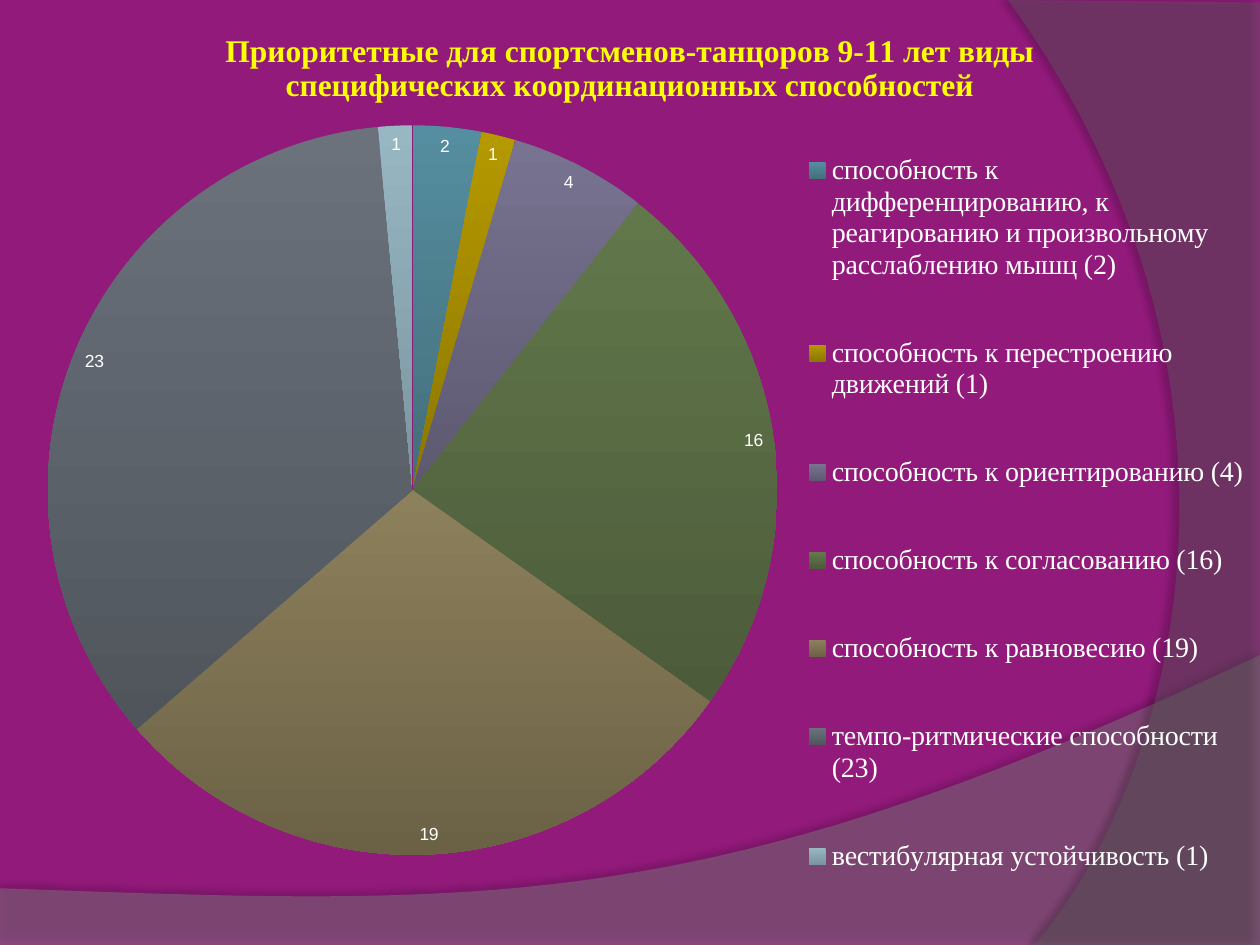
from lxml.etree import SubElement
from pptx import Presentation
from pptx.chart.data import CategoryChartData
from pptx.dml.color import RGBColor
from pptx.enum.chart import XL_CHART_TYPE, XL_LABEL_POSITION, XL_LEGEND_POSITION
from pptx.oxml import parse_xml
from pptx.oxml.ns import nsdecls, qn
from pptx.util import Inches, Pt

BACKGROUND = RGBColor(0x92, 0x1A, 0x7B)
WAVE_GRAY = RGBColor(0x7F, 0x7F, 0x7F)
ARC_GRAY = RGBColor(0x5E, 0x5E, 0x5E)
WHITE = RGBColor(0xFF, 0xFF, 0xFF)
YELLOW = RGBColor(0xFF, 0xFF, 0x00)

TITLE = ("Приоритетные для спортсменов-танцоров 9-11 лет виды "
         "специфических координационных способностей")
ABILITIES = [
    ("способность к дифференцированию, к реагированию и произвольному расслаблению мышц (2)",
     2, RGBColor(0x55, 0x8E, 0xA0), RGBColor(0x44, 0x6E, 0x7A)),
    ("способность к перестроению движений (1)",
     1, RGBColor(0xB5, 0x99, 0x00), RGBColor(0x8C, 0x77, 0x00)),
    ("способность к ориентированию (4)",
     4, RGBColor(0x77, 0x73, 0x91), RGBColor(0x5D, 0x59, 0x70)),
    ("способность к согласованию (16)",
     16, RGBColor(0x62, 0x78, 0x4B), RGBColor(0x4C, 0x5B, 0x3A)),
    ("способность к равновесию (19)",
     19, RGBColor(0x8D, 0x80, 0x5C), RGBColor(0x6B, 0x61, 0x45)),
    ("темпо-ритмические способности (23)",
     23, RGBColor(0x6B, 0x72, 0x7B), RGBColor(0x50, 0x55, 0x5C)),
    ("вестибулярная устойчивость (1)",
     1, RGBColor(0x97, 0xB7, 0xC3), RGBColor(0x7B, 0x95, 0x9F)),
]
CURVE_STEPS = 40


def curve_points(*controls):
    points = []
    for step in range(CURVE_STEPS + 1):
        t = step / CURVE_STEPS
        weights = ((1 - t) ** 3, 3 * t * (1 - t) ** 2, 3 * t ** 2 * (1 - t), t ** 3)
        points.append(tuple(
            Inches(sum(weight * control[axis] for weight, control in zip(weights, controls)))
            for axis in (0, 1)))
    return points


def set_layout(parent, left, top, width, height, inner=False):
    for old_layout in parent.findall(qn("c:layout")):
        parent.remove(old_layout)
    layout = parse_xml(f"<c:layout {nsdecls('c')}/>")
    manual = SubElement(layout, qn("c:manualLayout"))
    values = {"layoutTarget": "inner"} if inner else {}
    values.update(xMode="edge", yMode="edge",
                  x=left / presentation.slide_width, y=top / presentation.slide_height,
                  w=width / presentation.slide_width, h=height / presentation.slide_height)
    for name, value in values.items():
        SubElement(manual, qn(f"c:{name}")).set("val", str(value))
    parent.insert(0 if inner else 1, layout)


presentation = Presentation()
presentation.slide_width = Inches(10)
presentation.slide_height = Inches(7.5)
slide = presentation.slides.add_slide(presentation.slide_layouts[6])
slide.background.fill.solid()
slide.background.fill.fore_color.rgb = BACKGROUND

decorations = [
    {"corners": [(0, 7.05), (0, 7.5), (10, 7.5)],
     "curve": [(10, 5.2), (5.59, 7.29), (3.91, 7.19), (0, 7.05)],
     "color": WAVE_GRAY, "opacity": 45,
     "shadow": {"opacity": 35, "blur": 4, "distance": 3.5, "angle": 270}},
    {"corners": [(10, 0.02), (10, 7.5)],
     "curve": [(8.21, 7.5), (9.35, 6.19), (10.18, 3), (8, 0)],
     "color": ARC_GRAY, "opacity": 40,
     "shadow": {"opacity": 45, "blur": 4, "distance": 4, "angle": 180}},
]
for decoration in decorations:
    start, *corners = [(Inches(x), Inches(y)) for x, y in decoration["corners"]]
    builder = slide.shapes.build_freeform(*start)
    builder.add_line_segments(corners + curve_points(*decoration["curve"]), close=True)
    shape = builder.convert_to_shape()
    shape.fill.solid()
    shape.fill.fore_color.rgb = decoration["color"]
    shape.line.fill.background()
    color = shape.element.spPr.find(qn("a:solidFill"))[0]
    SubElement(color, qn("a:alpha")).set("val", str(decoration["opacity"] * 1000))
    shadow = decoration["shadow"]
    shape.element.spPr.append(parse_xml(
        f'<a:effectLst {nsdecls("a")}><a:outerShdw blurRad="{Pt(shadow["blur"])}" '
        f'dist="{Pt(shadow["distance"])}" dir="{shadow["angle"] * 60000}" rotWithShape="0">'
        f'<a:srgbClr val="000000"><a:alpha val="{shadow["opacity"] * 1000}"/></a:srgbClr>'
        '</a:outerShdw></a:effectLst>'))

chart_data = CategoryChartData()
chart_data.categories = [ability[0] for ability in ABILITIES]
chart_data.add_series("Series 1", [ability[1] for ability in ABILITIES])
chart = slide.shapes.add_chart(
    XL_CHART_TYPE.PIE, 0, 0, Inches(10), Inches(7.5), chart_data).chart

chart.has_title = True
chart.chart_title.text_frame.text = TITLE
chart.chart_title.include_in_layout = True
chart.has_legend = True
legend = chart.legend
legend.position = XL_LEGEND_POSITION.RIGHT
legend.include_in_layout = True

title_font = chart.chart_title.text_frame.paragraphs[0].runs[0].font
fonts = [
    (chart.font, {"name": "Arial", "size": Pt(10)}, WHITE),
    (title_font, {"name": "Times New Roman", "size": Pt(18), "bold": True}, YELLOW),
    (legend.font, {"name": "Times New Roman", "size": Pt(16)}, WHITE),
]
for font, formatting, color in fonts:
    for attribute, value in formatting.items():
        setattr(font, attribute, value)
    font.color.rgb = color

plot = chart.plots[0]
plot.vary_by_categories = True
plot.has_data_labels = True
plot.data_labels.show_value = True
plot.data_labels.show_percentage = False
plot.data_labels.position = XL_LABEL_POSITION.BEST_FIT

for index, (_, _, top_color, bottom_color) in enumerate(ABILITIES):
    point_format = plot.series[0].points[index].format
    point_format.fill.gradient()
    point_format.fill.gradient_angle = 270
    for stop, color, position in zip(
            point_format.fill.gradient_stops, (top_color, bottom_color), (0, 1)):
        stop.color.rgb = color
        stop.position = position
    point_format.line.fill.background()

chart_element = chart.element.find(qn("c:chart"))
set_layout(chart_element.find(qn("c:plotArea")),
           Inches(0.38), Inches(0.7), Inches(5.79), Inches(6.38), inner=True)
set_layout(chart_element.find(qn("c:legend")),
           Inches(6.5), Inches(0.78), Inches(3.5), Inches(6.59))

presentation.save("out.pptx")
